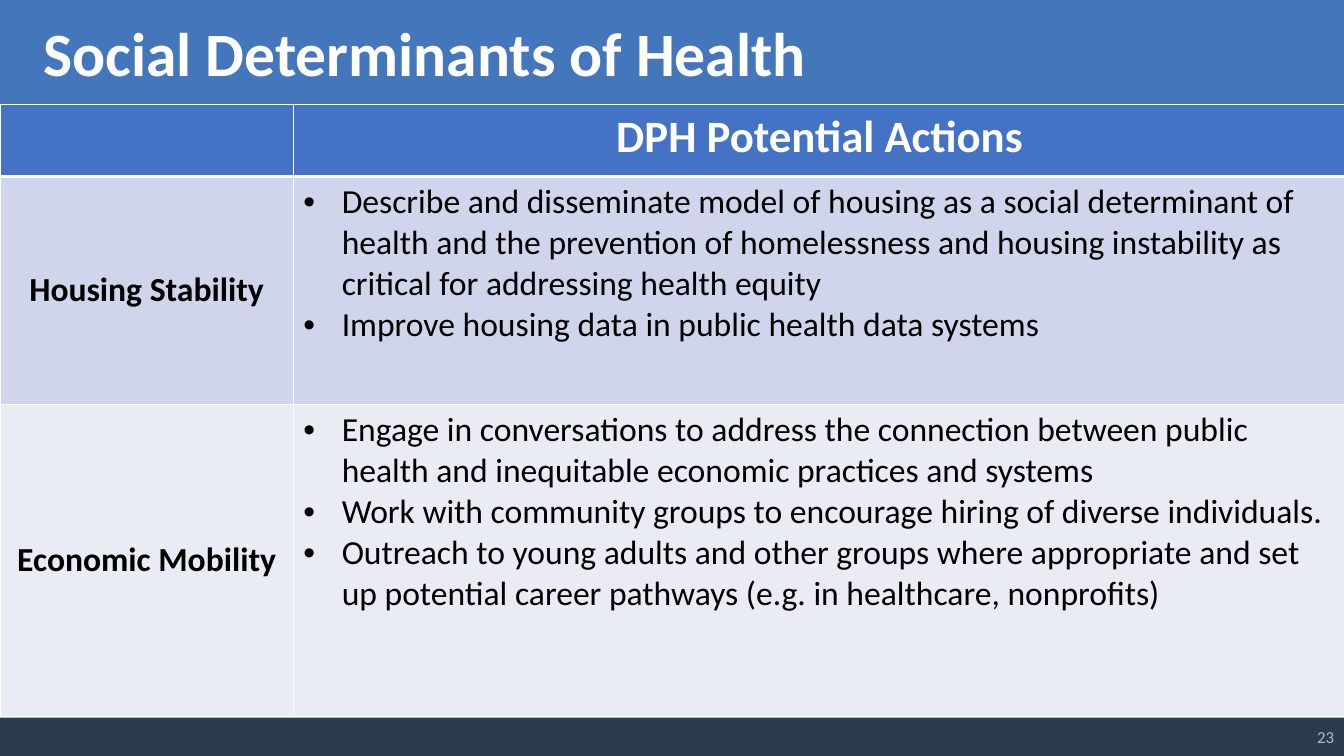
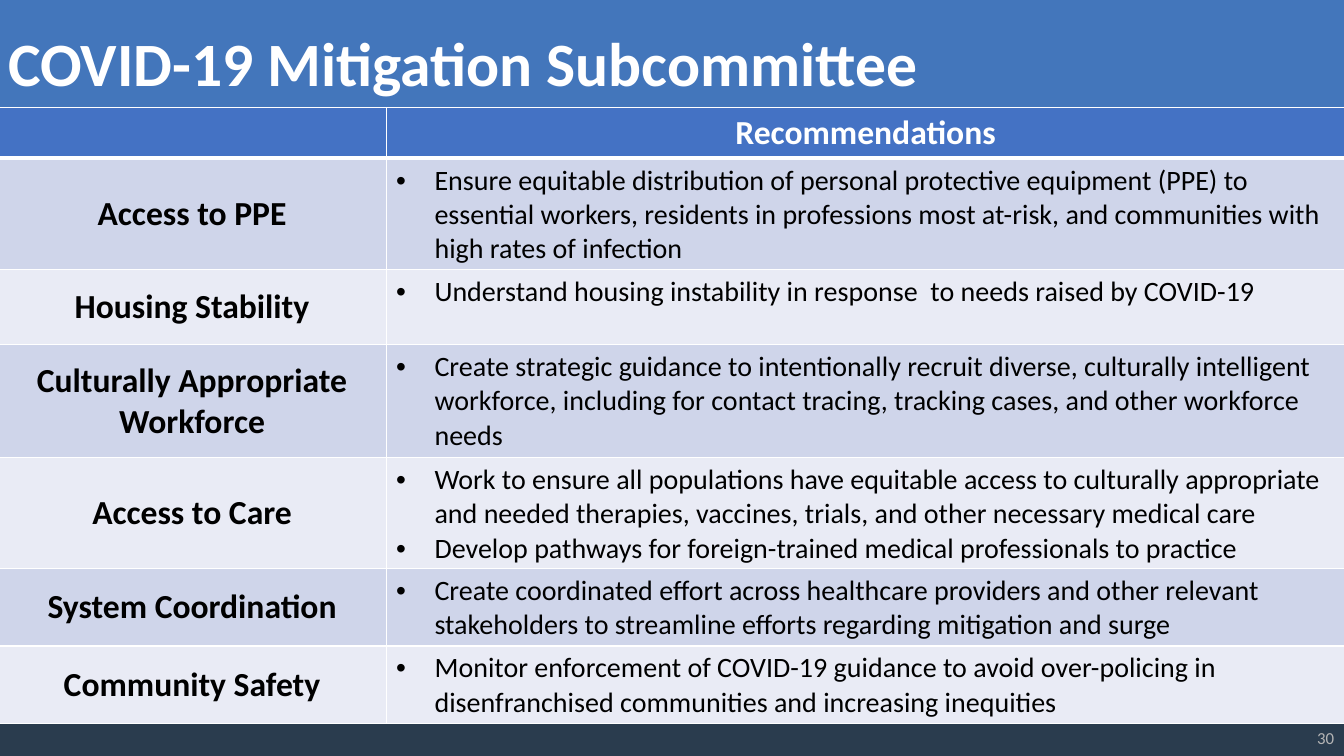
from dataclasses import dataclass

from lxml.etree import SubElement
from pptx import Presentation
from pptx.dml.color import RGBColor
from pptx.enum.shapes import MSO_SHAPE
from pptx.enum.text import MSO_ANCHOR as Anchor, MSO_AUTO_SIZE as AutoSize, PP_ALIGN as Align
from pptx.oxml.ns import qn
from pptx.util import Emu, Pt

# Shared geometry: 100 px to the inch
EMU_PER_PX = 9144
SLIDE_WIDTH, SLIDE_HEIGHT = 1333, 750
BULLET_INDENT = 38
FONT = "Calibri"

# Shared colours
WHITE, BLACK = "FFFFFF", "000000"
TITLE_BAND, FOOTER_BAND = "4376BB", "2A3C4E"
HEADER_FILL = "4472C4"
ROW_FILLS = ("CFD5EA", "E9EBF5")


@dataclass(frozen=True)
class Box:
    left: int
    top: int
    width: int
    height: int

    def emu(self) -> tuple:
        return tuple(px(n) for n in (self.left, self.top, self.width, self.height))


@dataclass(frozen=True)
class Topic:
    name: str
    height: int
    actions: tuple[str, ...]


@dataclass(frozen=True)
class TopicSlide:
    title: str
    title_left: int
    title_top: int
    table_left: int
    table_top: int
    columns: tuple[int, int]
    header: str
    header_height: int
    header_size: int
    action_size: int
    topics: tuple[Topic, ...]
    number: str
    number_top: int
    number_color: str


BANDS = (
    (Box(0, 0, SLIDE_WIDTH, 107), TITLE_BAND),
    (Box(0, 712, SLIDE_WIDTH, 38), FOOTER_BAND),
)

SLIDES = (
    TopicSlide(
        "Social Determinants of Health", 33, 10, 0, 104, (291, 1044),
        "DPH Potential Actions", 71, 32, 24,
        (
            Topic("Housing Stability", 226, (
                "Describe and disseminate model of housing as a social determinant of health and "
                "the prevention of homelessness and housing instability as critical for "
                "addressing health equity",
                "Improve housing data in public health data systems",
            )),
            Topic("Economic Mobility", 310, (
                "Engage in conversations to address the connection between public health and "
                "inequitable economic practices and systems",
                "Work with community groups to encourage hiring of diverse individuals.",
                "Outreach to young adults and other groups where appropriate and set up potential "
                "career pathways (e.g. in healthcare, nonprofits)",
            )),
        ),
        "23", 711, "ADB9CA",
    ),
    TopicSlide(
        "COVID-19 Mitigation Subcommittee", -2, 20, -2, 107, (385, 951),
        "Recommendations", 49, 24, 20,
        (
            Topic("Access to PPE", 107, (
                "Ensure equitable distribution of personal protective equipment (PPE) to essential "
                "workers, residents in professions most at-risk, and communities with high rates "
                "of infection",
            )),
            Topic("Housing Stability", 75, (
                "Understand housing instability in response  to needs raised by COVID-19",
            )),
            Topic("Culturally Appropriate Workforce", 112, (
                "Create strategic guidance to intentionally recruit diverse, culturally "
                "intelligent workforce, including for contact tracing, tracking cases, and other "
                "workforce needs",
            )),
            Topic("Access to Care", 107, (
                "Work to ensure all populations have equitable access to culturally appropriate "
                "and needed therapies, vaccines, trials, and other necessary medical care",
                "Develop pathways for foreign-trained medical professionals to practice",
            )),
            Topic("System Coordination", 75, (
                "Create coordinated effort across healthcare providers and other relevant "
                "stakeholders to streamline efforts regarding mitigation and surge",
            )),
            Topic("Community Safety", 77, (
                "Monitor enforcement of COVID-19 guidance to avoid over-policing in "
                "disenfranchised communities and increasing inequities",
            )),
        ),
        "30", 712, "B5B5B5",
    ),
)


# Helpers
def px(length: int) -> Emu:
    return Emu(length * EMU_PER_PX)


def rgb(color: str) -> RGBColor:
    return RGBColor.from_string(color)


def apply(target, values: dict) -> None:
    for name, value in values.items():
        setattr(target, name, value)


def write(frame, lines: tuple[str, ...], size: int, color: str,
          bold: bool = False, align=Align.LEFT, bullets: bool = False) -> None:
    """Write one paragraph per line in a single text style."""
    for index, line in enumerate(lines):
        paragraph = frame.add_paragraph() if index else frame.paragraphs[0]
        paragraph.alignment = align
        run = paragraph.add_run()
        run.text = line
        apply(run.font, {"name": FONT, "size": Pt(size), "bold": bold})
        run.font.color.rgb = rgb(color)
        if bullets:
            add_bullet(paragraph)


def add_bullet(paragraph) -> None:
    properties = paragraph._p.get_or_add_pPr()
    properties.set("marL", str(px(BULLET_INDENT)))
    properties.set("indent", str(px(-BULLET_INDENT)))
    SubElement(properties, qn("a:buFont"), typeface="Arial")
    SubElement(properties, qn("a:buChar"), char="•")


def style_cell(cell, fill: str, top: int = 1, bottom: int = 1) -> None:
    """Give a cell white borders (widths in points) and a solid fill."""
    properties = cell._tc.get_or_add_tcPr()
    for side, width in (("L", 1), ("R", 1), ("T", top), ("B", bottom)):
        line = SubElement(properties, qn(f"a:ln{side}"), w=str(Pt(width)))
        SubElement(SubElement(line, qn("a:solidFill")), qn("a:srgbClr"), val=WHITE)
    cell.fill.solid()
    cell.fill.fore_color.rgb = rgb(fill)


# Slide parts
def draw_bands(slide) -> None:
    """Draw the title and footer bands behind the title."""
    for box, color in BANDS:
        band = slide.shapes.add_shape(MSO_SHAPE.RECTANGLE, *box.emu())
        band.shadow.inherit = False
        band.fill.solid()
        band.fill.fore_color.rgb = rgb(color)
        band.line.fill.background()
        slide.shapes.title.element.addprevious(band.element)


def draw_title(slide, content: TopicSlide) -> None:
    title = slide.shapes.title
    box = Box(content.title_left, content.title_top, 1256, 84)
    apply(title, dict(zip(("left", "top", "width", "height"), box.emu())))
    apply(title.text_frame, {"vertical_anchor": Anchor.TOP, "word_wrap": True,
                             "auto_size": AutoSize.SHAPE_TO_FIT_TEXT})
    write(title.text_frame, (content.title,), 44, WHITE, bold=True)


def draw_table(slide, content: TopicSlide) -> None:
    heights = (content.header_height, *(topic.height for topic in content.topics))
    box = Box(content.table_left, content.table_top, sum(content.columns), sum(heights))
    table = slide.shapes.add_table(len(heights), len(content.columns), *box.emu()).table
    for column, width in zip(table.columns, content.columns):
        column.width = px(width)
    for row, height in zip(table.rows, heights):
        row.height = px(height)

    # Header row
    for cell in table.rows[0].cells:
        style_cell(cell, HEADER_FILL, bottom=3)
    write(table.cell(0, 1).text_frame, (content.header,), content.header_size, WHITE,
          bold=True, align=Align.CENTER)

    # One row per topic
    for index, topic in enumerate(content.topics):
        name_cell, action_cell = table.rows[index + 1].cells
        for cell in (name_cell, action_cell):
            style_cell(cell, ROW_FILLS[index % 2], top=1 if index else 3)
        name_cell.vertical_anchor = Anchor.MIDDLE
        write(name_cell.text_frame, (topic.name,), 24, BLACK, bold=True, align=Align.CENTER)
        write(action_cell.text_frame, topic.actions, content.action_size, BLACK, bullets=True)


def draw_number(slide, content: TopicSlide) -> None:
    box = Box(1034, content.number_top, 299, 40)
    frame = slide.shapes.add_textbox(*box.emu()).text_frame
    apply(frame, {"word_wrap": True, "vertical_anchor": Anchor.MIDDLE})
    write(frame, (content.number,), 12, content.number_color, align=Align.RIGHT)


def main() -> None:
    presentation = Presentation()
    apply(presentation, {"slide_width": px(SLIDE_WIDTH), "slide_height": px(SLIDE_HEIGHT)})
    title_only = presentation.slide_layouts.get_by_name("Title Only")
    for content in SLIDES:
        slide = presentation.slides.add_slide(title_only)
        draw_bands(slide)
        draw_title(slide, content)
        draw_table(slide, content)
        draw_number(slide, content)
    presentation.save("out.pptx")


if __name__ == "__main__":
    main()
